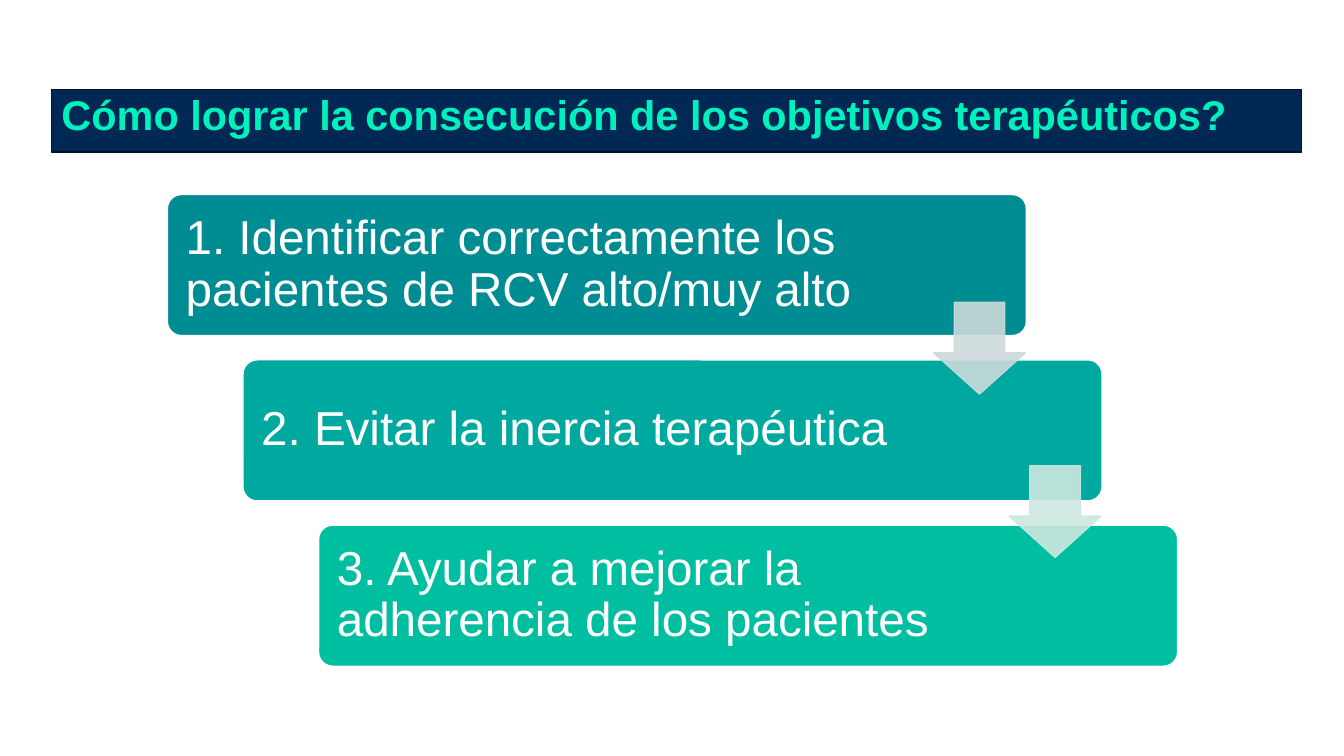
"""Build a slide with three descending steps towards therapeutic goals."""
import pptx
import pptx.util
import pptx.dml.color
import pptx.enum.shapes
import pptx.enum.text
import pptx.oxml
import pptx.oxml.ns
from dataclasses import dataclass

Inches, Pt = pptx.util.Inches, pptx.util.Pt
RGB = pptx.dml.color.RGBColor.from_string
Shape = pptx.enum.shapes.MSO_SHAPE
Anchor = pptx.enum.text.MSO_ANCHOR
Align = pptx.enum.text.PP_ALIGN

TITLE = "Cómo lograr la consecución de los objetivos terapéuticos?"
STEPS = [
    ("1. Identificar correctamente los pacientes de RCV alto/muy alto", "008C93"),
    ("2. Evitar la inercia terapéutica", "00A99F"),
    ("3. Ayudar a mejorar la adherencia de los pacientes", "00BEA0"),
]
ARROWS = ["CCDADC", "CCE8E0"]


@dataclass(frozen=True)
class Theme:
    font: str = "Arial"
    navy: str = "002855"
    edge: str = "001225"
    mint: str = "00F0BE"
    white: str = "FFFFFF"
    title_size: float = 29.6
    step_size: float = 34
    line_width: float = 1
    arrow_opacity: int = 90


THEME = Theme()


def apply(target, values):
    for name, value in values.items():
        setattr(target, name, value)


def paint(shape, fill, line):
    shape.fill.solid()
    shape.fill.fore_color.rgb = RGB(fill)
    shape.line.color.rgb = RGB(line)
    shape.line.width = Pt(THEME.line_width)


def write(shape, text, frame_values, font_values):
    frame = shape.text_frame
    frame.text = text
    apply(frame, {"word_wrap": True, "auto_size": pptx.enum.text.MSO_AUTO_SIZE.NONE, **frame_values})
    para = frame.paragraphs[0]
    apply(para, {"alignment": Align.LEFT, "line_spacing": 0.9, "space_before": Pt(0)})
    apply(para.font, {"name": THEME.font, **font_values})


def add_title(page):
    title = page.shapes.title
    apply(title, {"left": Inches(0.51), "top": Inches(0.89),
                  "width": Inches(12.4), "height": Inches(0.62)})
    paint(title, THEME.navy, THEME.edge)
    write(title, TITLE, {"vertical_anchor": Anchor.TOP},
          {"size": Pt(THEME.title_size), "bold": True})
    title.text_frame.paragraphs[0].font.color.rgb = RGB(THEME.mint)


def add_preset(page, preset, left, top, width, height, adjustments):
    shape = page.shapes.add_shape(preset, Inches(left), Inches(top), Inches(width), Inches(height))
    shape.shadow.inherit = False
    for index, value in enumerate(adjustments):
        shape.adjustments[index] = value
    return shape


def add_step(page, index, text, colour):
    box = add_preset(page, Shape.ROUNDED_RECTANGLE, 1.66 + 0.75 * index,
                     1.93 + 1.64 * index, 8.52, 1.4, [0.1])
    paint(box, colour, THEME.white)
    inset = Inches(0.14)
    write(box, text, {"vertical_anchor": Anchor.MIDDLE, "margin_left": inset, "margin_top": inset,
                      "margin_bottom": inset, "margin_right": Inches(1.6)},
          {"size": Pt(THEME.step_size)})
    box.text_frame.paragraphs[0].font.color.rgb = RGB(THEME.white)


def add_arrow(page, index, colour):
    arrow = add_preset(page, Shape.DOWN_ARROW, 9.26 + 0.75 * index,
                       3 + 1.62 * index, 0.91, 0.91, [0.55, 0.45])
    paint(arrow, colour, colour)
    for tint in arrow._element.spPr.iter(pptx.oxml.ns.qn("a:srgbClr")):
        alpha = tint.makeelement(pptx.oxml.ns.qn("a:alpha"), {"val": str(THEME.arrow_opacity * 1000)})
        tint.append(alpha)


def main():
    deck = pptx.Presentation()
    apply(deck, {"slide_width": Inches(13.33), "slide_height": Inches(7.5)})
    page = deck.slides.add_slide(deck.slide_layouts[5])
    add_title(page)
    for index, (text, colour) in enumerate(STEPS):
        add_step(page, index, text, colour)
    for index, colour in enumerate(ARROWS):
        add_arrow(page, index, colour)
    deck.save("out.pptx")


if __name__ == "__main__":
    main()
